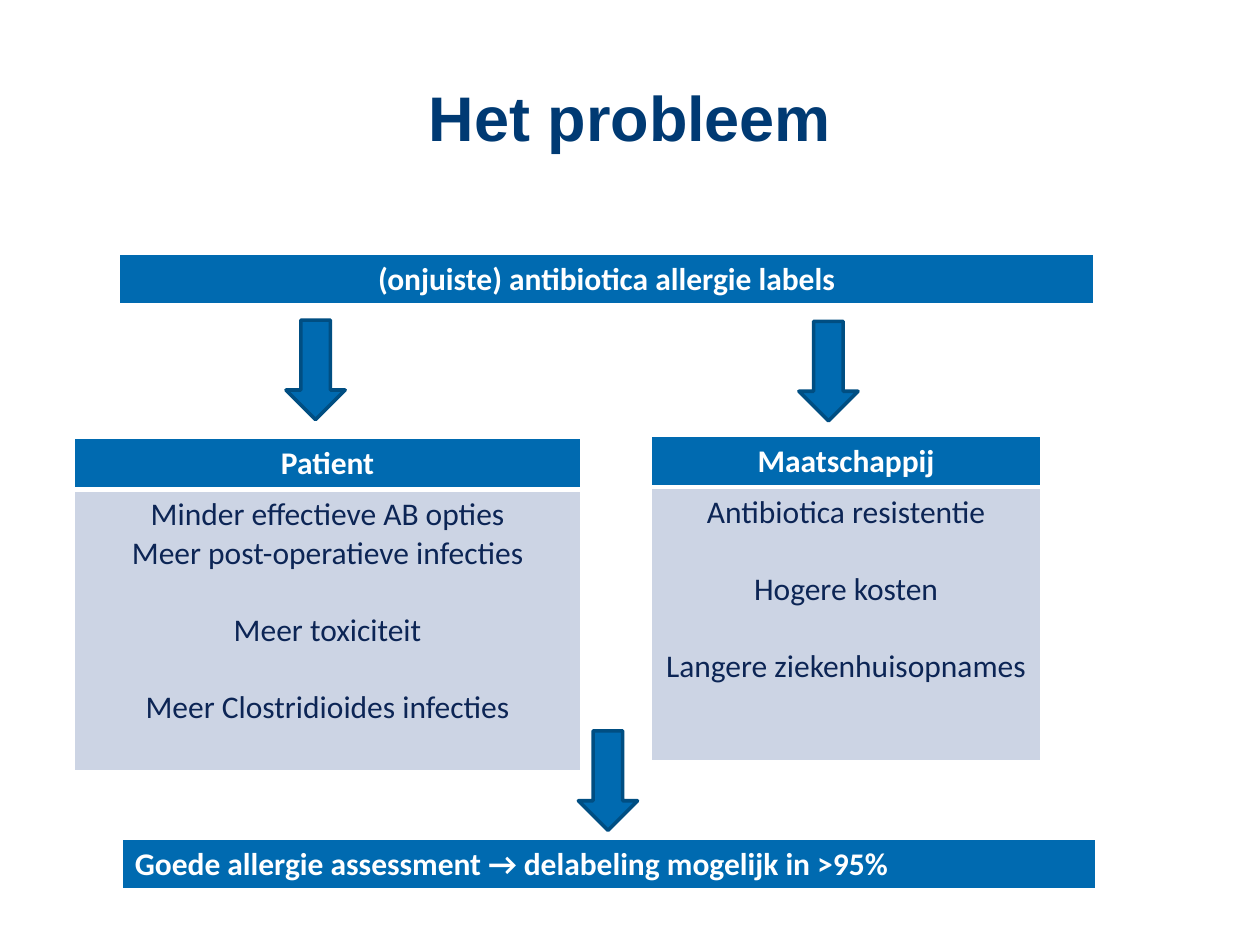
from dataclasses import dataclass

from lxml import etree
from pptx import Presentation
from pptx.dml.color import RGBColor
from pptx.enum.shapes import MSO_SHAPE
from pptx.enum.text import MSO_ANCHOR, PP_ALIGN
from pptx.oxml.ns import qn
from pptx.util import Inches, Pt

DOWN_ARROW = MSO_SHAPE.DOWN_ARROW
MIDDLE = MSO_ANCHOR.MIDDLE
LEFT, CENTER = PP_ALIGN.LEFT, PP_ALIGN.CENTER


@dataclass(frozen=True)
class Theme:
    title_color: RGBColor = RGBColor.from_string("003A73")
    header_fill: RGBColor = RGBColor.from_string("006AB0")
    header_text: RGBColor = RGBColor.from_string("FFFFFF")
    body_fill: RGBColor = RGBColor.from_string("CCD4E4")
    body_text: RGBColor = RGBColor.from_string("0C2555")
    arrow_line: RGBColor = RGBColor.from_string("004E82")
    border: str = "FFFFFF"
    title_font: str = "Arial"
    table_font: str = "Calibri"
    title_size: Pt = Pt(36)
    table_size: Pt = Pt(18)
    paragraph_gap: Pt = Pt(22)


theme = Theme()
presentation = Presentation()
presentation.slide_width, presentation.slide_height = Inches(10), Inches(7.5)

# The slide is a grid of 100 columns by 75 rows.
column = presentation.slide_width / 100
row = presentation.slide_height / 75
HEADER_ROWS = 4


def grid_box(left, top, width, height):
    """Turn grid columns and rows into slide lengths."""
    return [round(left * column), round(top * row),
            round(width * column), round(height * row)]


def format_cell(cell, paragraphs, alignment, is_header):
    """Fill a cell; each paragraph is (text, whether a gap precedes it)."""
    cell.fill.solid()
    cell.fill.fore_color.rgb = theme.header_fill if is_header else theme.body_fill
    cell.text_frame.text = "\n".join(text for text, _ in paragraphs)
    for paragraph, (_, has_gap) in zip(cell.text_frame.paragraphs, paragraphs):
        paragraph.alignment = alignment
        if has_gap:
            paragraph.space_before = theme.paragraph_gap
        font = paragraph.runs[0].font
        font.name, font.size, font.bold = theme.table_font, theme.table_size, is_header
        font.color.rgb = theme.header_text if is_header else theme.body_text

    top_width, bottom_width = (1, 3) if is_header else (3, 1)
    borders = (("lnL", 1), ("lnR", 1), ("lnT", top_width), ("lnB", bottom_width))
    properties = cell._tc.get_or_add_tcPr()
    for position, (side, width) in enumerate(borders):
        line = etree.Element(qn(f"a:{side}"), w=str(Pt(width)))
        fill = etree.SubElement(line, qn("a:solidFill"))
        etree.SubElement(fill, qn("a:srgbClr"), val=theme.border)
        properties.insert(position, line)


slide = presentation.slides.add_slide(presentation.slide_layouts[5])

title = slide.shapes.title
title.left, title.top, title.width, title.height = grid_box(5, 3, 90, 12.5)
title.text_frame.text = "Het probleem"
title.text_frame.vertical_anchor = MIDDLE
title_paragraph = title.text_frame.paragraphs[0]
title_paragraph.alignment = CENTER
title_font = title_paragraph.runs[0].font
title_font.name, title_font.size, title_font.bold = theme.title_font, theme.title_size, True
title_font.color.rgb = theme.title_color

# Each table: left, top, width, body height, alignment, header, body paragraphs
tables = [
    (5.9, 34.8, 40.2, 22.3, CENTER, "Patient", [
        ("Minder effectieve AB opties", False),
        ("Meer post-operatieve infecties", False),
        ("Meer toxiciteit", True),
        ("Meer Clostridioides infecties", True),
    ]),
    (51.7, 34.6, 30.9, 21.7, CENTER, "Maatschappij", [
        ("Antibiotica resistentie", False),
        ("Hogere kosten", True),
        ("Langere ziekenhuisopnames", True),
    ]),
    (9.5, 20.2, 77.3, 0, CENTER, "(onjuiste) antibiotica allergie labels", []),
    (9.7, 66.6, 77.3, 0, LEFT,
     "Goede allergie assessment → delabeling mogelijk in >95%", []),
]
for left, top, width, body_rows, alignment, header, body in tables:
    box = grid_box(left, top, width, HEADER_ROWS + body_rows)
    table = slide.shapes.add_table(2 if body else 1, 1, *box).table
    table.horz_banding = False
    table.rows[0].height = round(HEADER_ROWS * row)
    format_cell(table.cell(0, 0), [(header, False)], alignment, True)
    if body:
        table.rows[1].height = round(body_rows * row)
        format_cell(table.cell(1, 0), body, alignment, False)

for left, top in ((45.9, 58), (22.7, 25.4), (63.4, 25.5)):
    arrow = slide.shapes.add_shape(DOWN_ARROW, *grid_box(left, top, 4.7, 7.9))
    arrow.shadow.inherit = False
    arrow.fill.solid()
    arrow.fill.fore_color.rgb = theme.header_fill
    arrow.line.color.rgb = theme.arrow_line
    arrow.line.width = Pt(2)

presentation.save("out.pptx")
